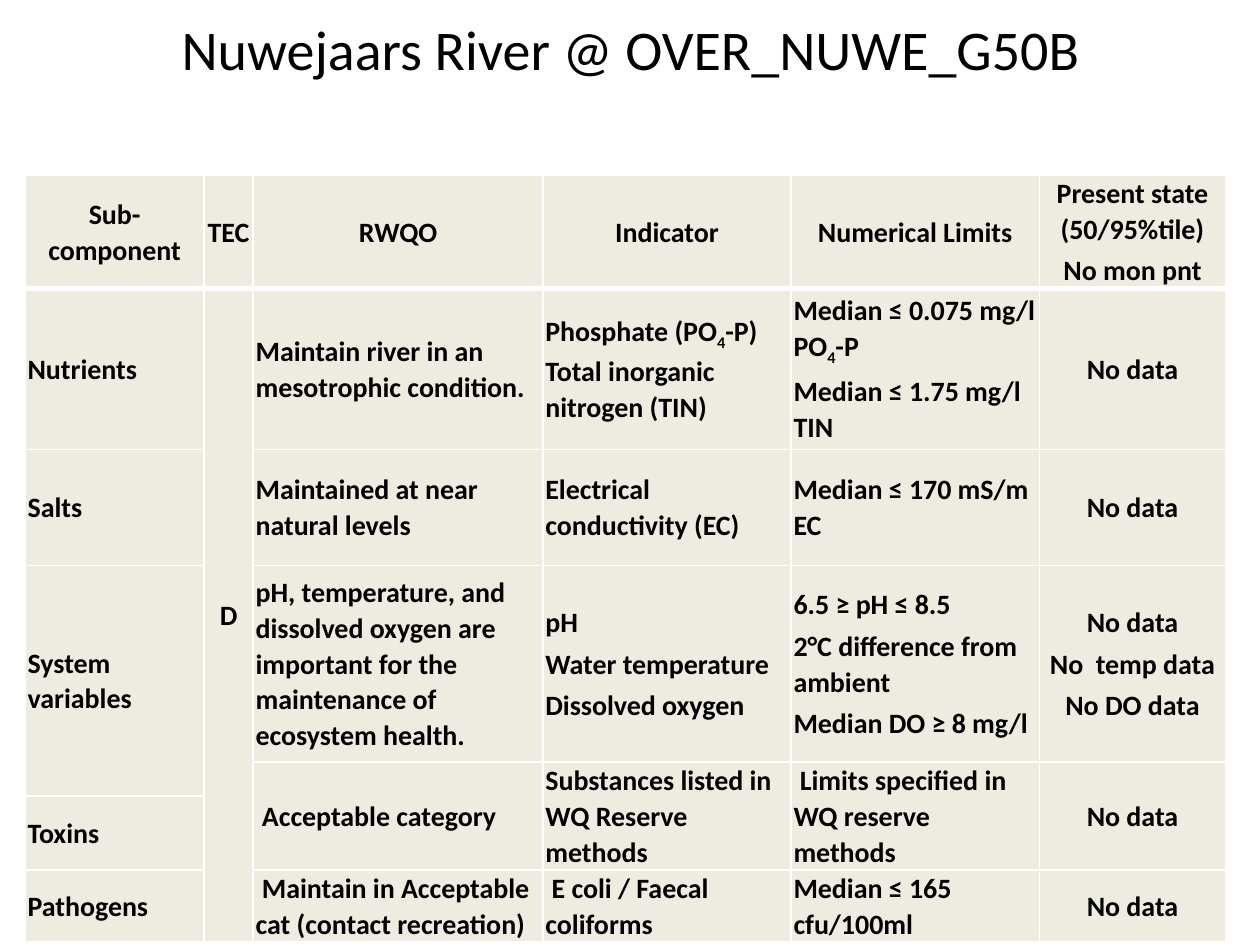
from lxml import etree
from pptx import Presentation
from pptx.dml.color import RGBColor
from pptx.enum import text
from pptx.oxml import ns
from pptx.util import Pt

FONT = "Calibri"
BLACK, WHITE, CREAM = "000000", "FFFFFF", "EEECE1"


def color(hex_string):
    return RGBColor.from_string(hex_string)


def add_border(cell, side, width):
    line = etree.SubElement(cell._tc.get_or_add_tcPr(), ns.qn(f"a:ln{side}"), w=str(Pt(width)))
    fill = etree.SubElement(line, ns.qn("a:solidFill"))
    etree.SubElement(fill, ns.qn("a:srgbClr"), val=WHITE)


presentation = Presentation()
presentation.slide_width, presentation.slide_height = Pt(720), Pt(540)
slide = presentation.slides.add_slide(presentation.slide_layouts[5])

# Title
title = slide.shapes.title
title.left, title.top, title.width, title.height = Pt(36.5), Pt(2), Pt(648), Pt(90)
title.text_frame.vertical_anchor = text.MSO_ANCHOR.TOP
title.text_frame.margin_top = Pt(6)
paragraph = title.text_frame.paragraphs[0]
paragraph.alignment = text.PP_ALIGN.CENTER
run = paragraph.add_run()
run.text = "Nuwejaars River @ OVER_NUWE_G50B"
run.font.name, run.font.size = FONT, Pt(32)
run.font.color.rgb = color(BLACK)

# Table contents: a line break starts a paragraph, bars enclose a subscript
rows = [
    ["Sub-component", "TEC", "RWQO", "Indicator", "Numerical Limits",
     "Present state (50/95%tile)\nNo mon pnt"],
    ["Nutrients", "D", "Maintain river in an mesotrophic condition.",
     "Phosphate (PO|4|-P) Total inorganic nitrogen (TIN)",
     "Median ≤ 0.075 mg/l PO|4|-P\nMedian ≤ 1.75 mg/l TIN", "No data"],
    ["Salts", "", "Maintained at near natural levels", "Electrical conductivity (EC)",
     "Median ≤ 170 mS/m EC", "No data"],
    ["System variables", "",
     "pH, temperature, and dissolved oxygen are important for the maintenance of ecosystem health.",
     "pH\nWater temperature\nDissolved oxygen",
     "6.5 ≥ pH ≤ 8.5\n2°C difference from ambient\nMedian DO ≥ 8 mg/l",
     "No data\nNo  temp data\nNo DO data"],
    ["", "", " Acceptable category", "Substances listed in WQ Reserve methods",
     " Limits specified in WQ reserve methods", "No data"],
    ["Toxins", "", "", "", "", ""],
    ["Pathogens", "", " Maintain in Acceptable cat (contact recreation)",
     " E coli / Faecal coliforms", "Median ≤ 165 cfu/100ml ", "No data"],
]
column_widths = [102.2, 28.1, 165.6, 141.8, 141.8, 106.6]
row_heights = [22.3, 92.2, 66.2, 112.3, 19.4, 42.5, 24.5]
centered_columns = (1, 5)

# Table grid
table = slide.shapes.add_table(len(rows), len(column_widths), Pt(14.4), Pt(100.1),
                               Pt(sum(column_widths)), Pt(sum(row_heights))).table
table.horz_banding = False
for column, width in zip(table.columns, column_widths):
    column.width = Pt(width)
for row, height in zip(table.rows, row_heights):
    row.height = Pt(height)

# Cells
for row_index, row in enumerate(rows):
    for column_index, content in enumerate(row):
        cell = table.cell(row_index, column_index)
        cell.margin_left = cell.margin_right = Pt(1.4)
        cell.margin_top = cell.margin_bottom = Pt(0)
        cell.vertical_anchor = text.MSO_ANCHOR.MIDDLE
        for side in "LRTB":
            under_header = (row_index, side) in ((0, "B"), (1, "T"))
            add_border(cell, side, 3 if under_header else 1)
        cell.fill.solid()
        cell.fill.fore_color.rgb = color(CREAM)
        if not content:
            continue
        centered = row_index == 0 or column_index in centered_columns
        for index, line in enumerate(content.split("\n")):
            frame = cell.text_frame
            paragraph = frame.add_paragraph() if index else frame.paragraphs[0]
            paragraph.alignment = text.PP_ALIGN.CENTER if centered else text.PP_ALIGN.LEFT
            paragraph.line_spacing = 1.05
            paragraph.space_before = Pt(3 if index else 0)
            for part_index, part in enumerate(line.split("|")):
                run = paragraph.add_run()
                run.text = part
                run.font.name, run.font.size, run.font.bold = FONT, Pt(16), True
                run.font.color.rgb = color(BLACK)
                if part_index % 2:
                    run.font._element.set("baseline", "-25000")

# Merged cells: first row, last row, column
merges = [(1, 6, 1), (3, 4, 0)] + [(4, 5, column) for column in range(2, 6)]
for first, last, column in merges:
    table.cell(first, column).merge(table.cell(last, column))

presentation.save("out.pptx")
